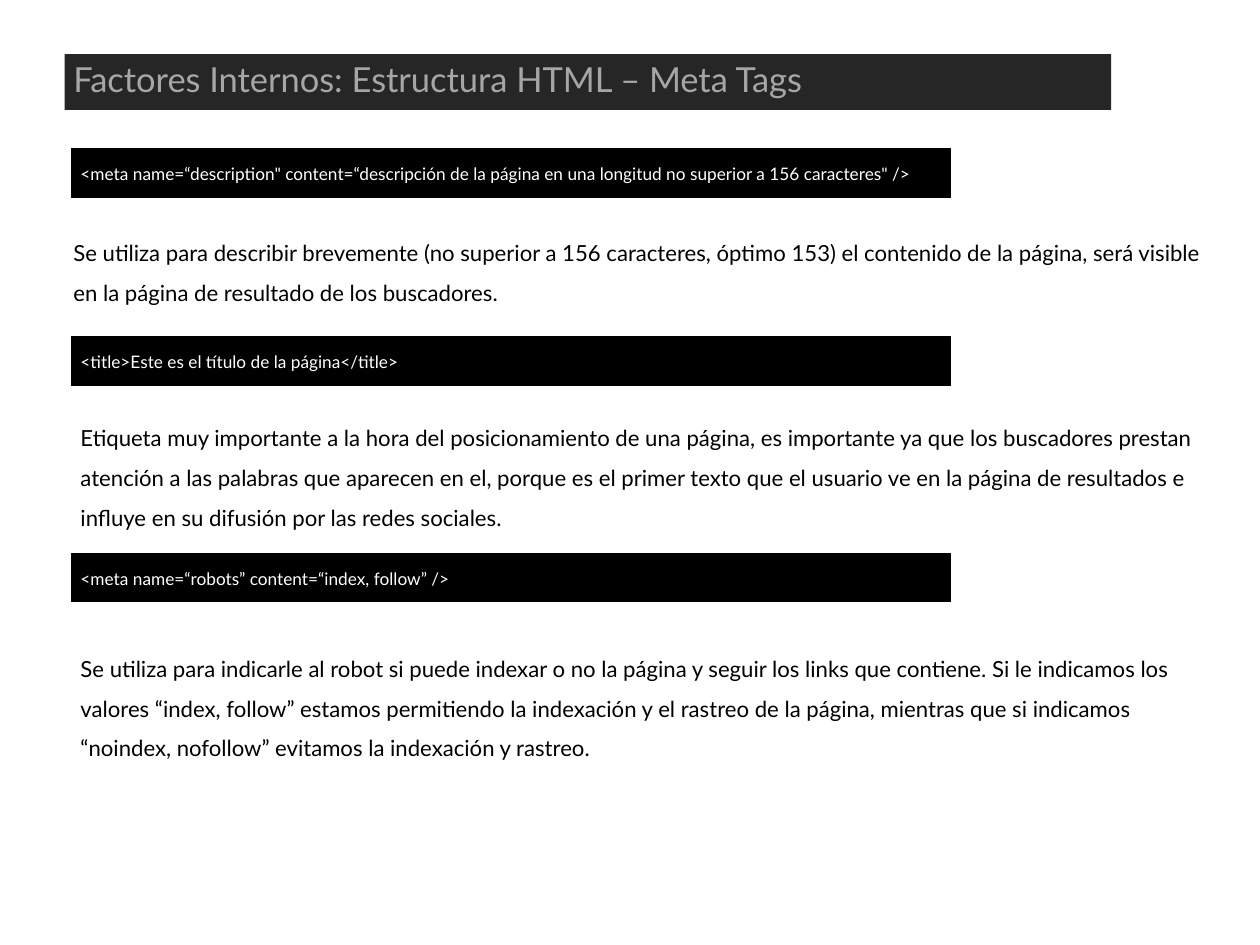
"""Build the slide about HTML meta tags as internal SEO factors."""
from pptx import Presentation
from pptx import util as u
from pptx.dml.color import RGBColor
from pptx.enum import shapes, text


def add_bar(s, box, color):
    sp = s.shapes.add_shape(shapes.MSO_SHAPE.RECTANGLE, *map(u.Inches, box))
    sp.shadow.inherit = False
    sp.fill.solid()
    sp.fill.fore_color.rgb = RGBColor.from_string(color)
    sp.line.fill.background()
    return sp


def write(sp, words, size, color, spacing):
    tf = sp.text_frame
    tf.word_wrap = True
    tf.vertical_anchor = text.MSO_ANCHOR.TOP
    p = tf.paragraphs[0]
    p.alignment = text.PP_ALIGN.LEFT
    p.line_spacing = spacing
    r = p.add_run()
    r.text = words
    for name, value in {"name": "Lato", "size": u.Pt(size)}.items():
        setattr(r.font, name, value)
    r.font.color.rgb = RGBColor.from_string(color)


prs = Presentation()
prs.slide_width, prs.slide_height = u.Inches(14.22), u.Inches(10.66)
s = prs.slides.add_slide(prs.slide_layouts[6])

title = add_bar(s, (0.73, 0.61, 11.81, 0.63), "262626")
write(title, "Factores Internos: Estructura HTML – Meta Tags", 28, "A6A6A6", 1.0)

tags = [
    (1.68, "<meta name=“description\" content=“descripción de la página en una "
     "longitud no superior a 156 caracteres\" />",
     (0.73, 2.5, 12.99, 1.31),
     "Se utiliza para describir brevemente (no superior a 156 caracteres, óptimo 153) "
     "el contenido de la página, será visible en la página de resultado de los buscadores."),
    (3.8, "<title>Este es el título de la página</title>",
     (0.81, 4.59, 12.99, 1.77),
     "Etiqueta muy importante a la hora del posicionamiento de una página, es importante "
     "ya que los buscadores prestan atención a las palabras que aparecen en el, porque es "
     "el primer texto que el usuario ve en la página de resultados e influye en su "
     "difusión por las redes sociales."),
    (6.24, "<meta name=“robots” content=“index, follow” />",
     (0.81, 7.19, 12.99, 1.77),
     "Se utiliza para indicarle al robot si puede indexar o no la página y seguir los "
     "links que contiene. Si le indicamos los valores “index, follow” estamos permitiendo "
     "la indexación y el rastreo de la página, mientras que si indicamos “noindex, "
     "nofollow” evitamos la indexación y rastreo."),
]

for top, code, note_box, note in tags:
    bar = add_bar(s, (0.81, top, 9.92, 0.55), "000000")
    bar.line.color.rgb = RGBColor.from_string("000000")
    bar.line.width = u.Pt(0.75)
    for box, words, size, color in [
        ((0.81, top, 12.28, 0.41), code, 14, "FFFFFF"),
        (note_box, note, 18, "000000"),
    ]:
        write(s.shapes.add_textbox(*map(u.Inches, box)), words, size, color, 1.5)

prs.save("out.pptx")
